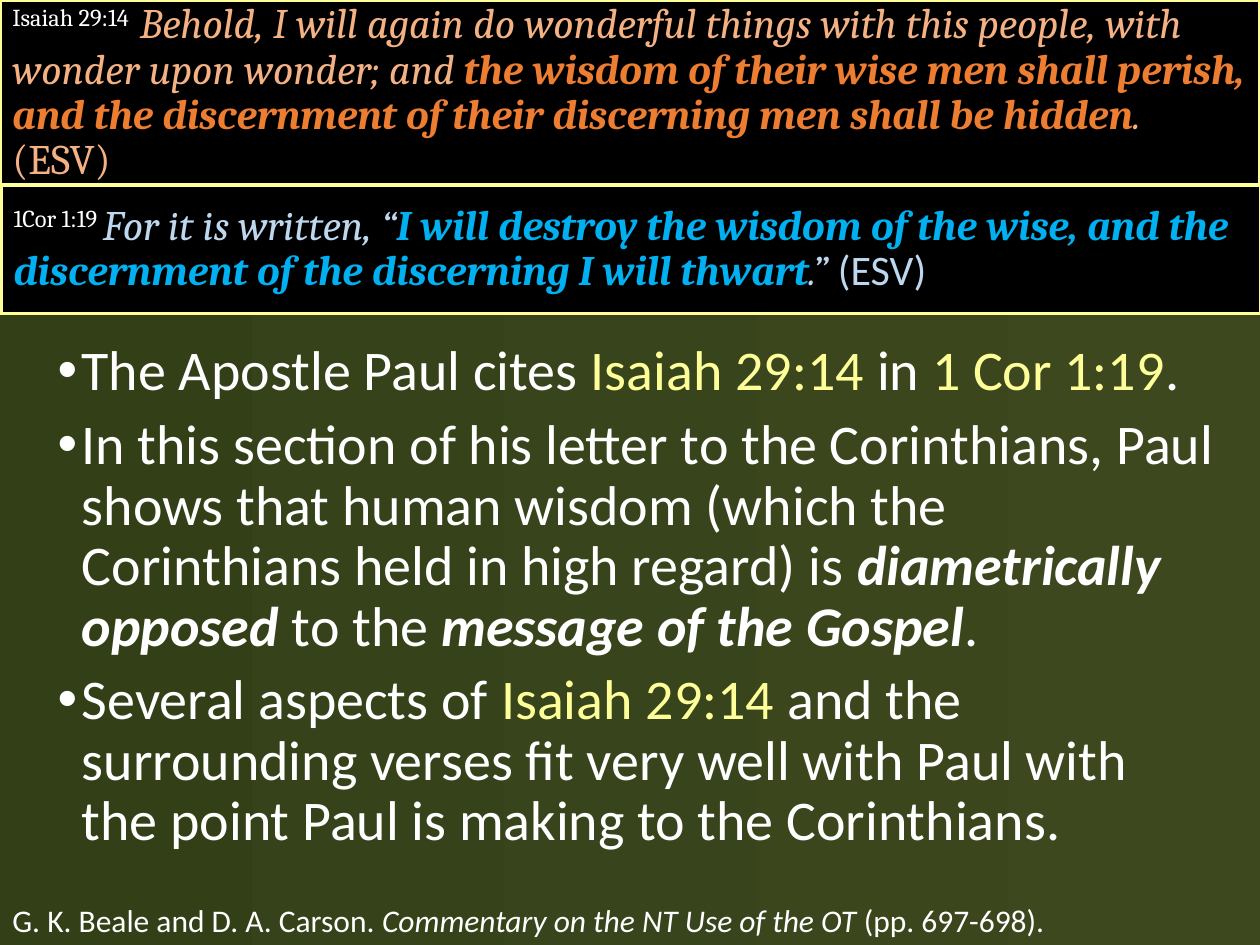
import dataclasses

import lxml.etree
import pptx
import pptx.dml.color
import pptx.enum.shapes
import pptx.enum.text
import pptx.oxml.ns
import pptx.util

WIDTH, HEIGHT = 10, 7.5
WHITE, BLACK, YELLOW = "FFFFFF", "000000", "FFFF99"
PEACH, ORANGE, PALE_BLUE, BLUE = "F4B183", "ED7D31", "BDD7EE", "00B0F0"
BULLET_INDENT = 0.19


@dataclasses.dataclass(frozen=True)
class Phrase:
    text: str
    color: str = WHITE
    bold: bool = False
    italic: bool = False
    font: str = "Calibri"
    raised: bool = False


@dataclasses.dataclass(frozen=True)
class Area:
    """A place on the slide, in shares of its width and height."""
    left: float
    top: float
    width: float
    height: float

    def lengths(self) -> list[int]:
        return [pptx.util.Inches(share * side) for share, side in (
            (self.left, WIDTH), (self.top, HEIGHT),
            (self.width, WIDTH), (self.height, HEIGHT))]


def rgb(color: str) -> pptx.dml.color.RGBColor:
    return pptx.dml.color.RGBColor.from_string(color)


def verse(text: str, color: str, **style) -> Phrase:
    return Phrase(text, color, font="Cambria", **style)


def write(paragraph, phrases: list[Phrase], size: float) -> None:
    for phrase in phrases:
        run = paragraph.add_run()
        run.text = phrase.text
        run.font.name = phrase.font
        run.font.size = pptx.util.Pt(size)
        run.font.bold = phrase.bold
        run.font.italic = phrase.italic
        run.font.color.rgb = rgb(phrase.color)
        if phrase.raised:
            run.font._element.set("baseline", "30000")


def space(paragraph) -> None:
    paragraph.line_spacing = 0.9
    paragraph.space_before = pptx.util.Pt(7.5)


def add_bullet(paragraph) -> None:
    properties = paragraph._p.get_or_add_pPr()
    indent = pptx.util.Inches(BULLET_INDENT)
    properties.set("marL", str(indent))
    properties.set("indent", str(-indent))
    for tag, key, value in (("a:buFont", "typeface", "Arial"), ("a:buChar", "char", "•")):
        lxml.etree.SubElement(properties, pptx.oxml.ns.qn(tag)).set(key, value)


def add_text_frame(slide, area: Area):
    frame = slide.shapes.add_textbox(*area.lengths()).text_frame
    frame.word_wrap = True
    return frame


def add_quotation(slide, area: Area, phrases: list[Phrase]) -> None:
    panel = slide.shapes.add_shape(
        pptx.enum.shapes.MSO_SHAPE.RECTANGLE, *area.lengths())
    panel.shadow.inherit = False
    panel.fill.solid()
    panel.fill.fore_color.rgb = rgb(BLACK)
    panel.line.color.rgb = rgb(YELLOW)
    panel.line.width = pptx.util.Pt(2)
    panel.text_frame.word_wrap = True
    panel.text_frame.vertical_anchor = pptx.enum.text.MSO_ANCHOR.MIDDLE
    paragraph = panel.text_frame.paragraphs[0]
    paragraph.alignment = pptx.enum.text.PP_ALIGN.LEFT
    space(paragraph)
    write(paragraph, phrases, 24)


def add_points(slide, area: Area, points: list[list[Phrase]]) -> None:
    frame = add_text_frame(slide, area)
    for index, phrases in enumerate(points):
        paragraph = frame.add_paragraph() if index else frame.paragraphs[0]
        space(paragraph)
        add_bullet(paragraph)
        write(paragraph, phrases, 32)


def paint_background(slide) -> None:
    fill = slide.background.fill
    fill.gradient()
    fill.gradient_angle = 180
    for stop, color, position in zip(fill.gradient_stops, ("3D481F", "334017"), (0, 1)):
        stop.color.rgb = rgb(color)
        stop.position = position


ISAIAH = [
    verse("Isaiah 29:14  ", WHITE, raised=True),
    verse("Behold, I will again do wonderful things with this people, "
          "with wonder upon wonder; and ", PEACH, italic=True),
    verse("the wisdom of their wise men shall perish, and the discernment "
          "of their discerning men shall be hidden", ORANGE, bold=True, italic=True),
    verse(". ", PEACH, italic=True),
    verse("(ESV)", PEACH),
]
CORINTHIANS = [
    verse("1Cor 1:19 ", WHITE, raised=True),
    verse("For it is written, “", PALE_BLUE, italic=True),
    verse("I will destroy the wisdom of the wise, and the discernment "
          "of the discerning I will thwart", BLUE, bold=True, italic=True),
    verse(".” ", PALE_BLUE, italic=True),
    Phrase("(ESV)", PALE_BLUE),
]
POINTS = [
    [Phrase("The Apostle Paul cites "), Phrase("Isaiah 29:14 ", YELLOW),
     Phrase("in "), Phrase("1 Cor 1:19", YELLOW), Phrase(".")],
    [Phrase("In this section of his letter to the Corinthians, Paul shows that "
            "human wisdom (which the Corinthians held in high regard) is "),
     Phrase("diametrically opposed", bold=True, italic=True), Phrase(" to the "),
     Phrase("message of the Gospel", bold=True, italic=True), Phrase(".")],
    [Phrase("Several aspects of "), Phrase("Isaiah 29:14", YELLOW),
     Phrase(" and the surrounding verses fit very well with Paul with "
            "the point Paul is making to the Corinthians.")],
]
CITATION = [
    Phrase("G. K. Beale and D. A. Carson. "),
    Phrase("Commentary on the NT Use of the OT ", italic=True),
    Phrase("(pp. 697-698)."),
]


def main() -> None:
    presentation = pptx.Presentation()
    presentation.slide_width = pptx.util.Inches(WIDTH)
    presentation.slide_height = pptx.util.Inches(HEIGHT)
    slide = presentation.slides.add_slide(presentation.slide_layouts[6])
    paint_background(slide)
    citation = add_text_frame(slide, Area(0, 7.1 / HEIGHT, 1, 0.4 / HEIGHT))
    write(citation.paragraphs[0], CITATION, 18)
    add_quotation(slide, Area(0, 0, 1, 1.48 / HEIGHT), ISAIAH)
    add_quotation(slide, Area(0.001, 1.47 / HEIGHT, 1, 1.02 / HEIGHT), CORINTHIANS)
    add_points(slide, Area(0.036, 2.67 / HEIGHT, 0.939, 4.46 / HEIGHT), POINTS)
    presentation.save("out.pptx")


if __name__ == "__main__":
    main()
